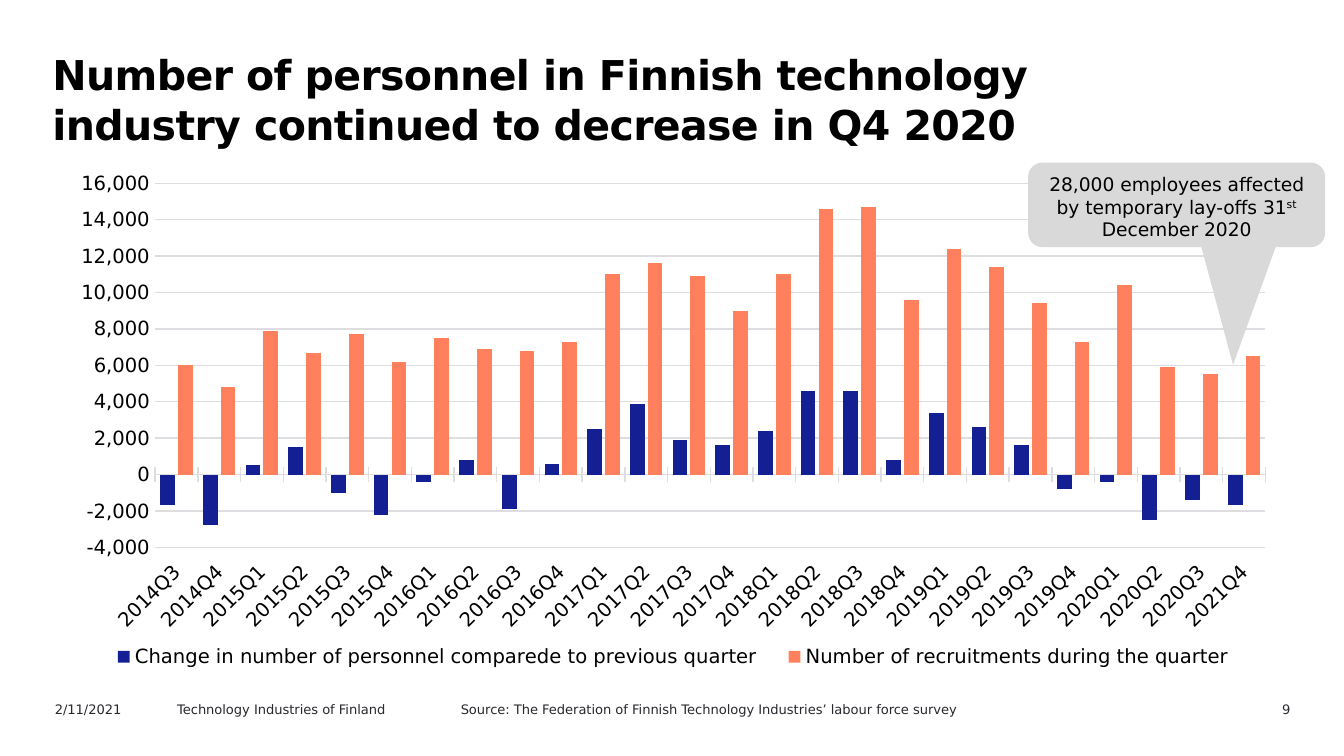
from dataclasses import dataclass

from lxml.etree import SubElement
from pptx import Presentation
from pptx.chart.data import CategoryChartData
from pptx.dml.color import RGBColor
from pptx.enum.chart import (XL_CHART_TYPE, XL_LEGEND_POSITION,
                             XL_TICK_LABEL_POSITION, XL_TICK_MARK)
from pptx.enum.shapes import MSO_SHAPE
from pptx.enum.text import MSO_ANCHOR, PP_ALIGN
from pptx.oxml.ns import qn
from pptx.util import Inches, Pt


@dataclass(frozen=True)
class Theme:
    font: str = "DejaVu Sans"
    black: RGBColor = RGBColor(0x00, 0x00, 0x00)
    dark: RGBColor = RGBColor(0x29, 0x28, 0x2E)
    grid: RGBColor = RGBColor(0xDE, 0xDD, 0xE1)
    callout: RGBColor = RGBColor(0xD9, 0xD9, 0xD9)
    navy: RGBColor = RGBColor(0x14, 0x1F, 0x94)
    coral: RGBColor = RGBColor(0xFF, 0x80, 0x5C)
    title_size: float = 22
    chart_size: float = 10.5
    body_size: float = 10
    footer_size: float = 7


@dataclass(frozen=True)
class Label:
    text: str
    left: float
    width: float
    align: PP_ALIGN = PP_ALIGN.LEFT


@dataclass(frozen=True)
class Series:
    name: str
    values: tuple
    color: RGBColor


T = Theme()

FOOTER = (
    Label("2/11/2021", 0.31, 1),
    Label("Technology Industries of Finland", 1.22, 1.94),
    Label("Source: The Federation of Finnish Technology Industries’ labour force survey", 3.33, 4.11),
    Label("9", 8.76, 0.94, PP_ALIGN.RIGHT),
)

# The last quarter is labelled 2021Q4 on the slide
QUARTERS = [f"{2014 + i // 4}Q{i % 4 + 1}" for i in range(2, 27)] + ["2021Q4"]

SERIES = (
    Series("Change in number of personnel comparede to previous quarter",
           (-1700, -2800, 500, 1500, -1000, -2200, -400, 800, -1900, 600, 2500, 3900, 1900,
            1600, 2400, 4600, 4600, 800, 3400, 2600, 1600, -800, -400, -2500, -1400, -1700),
           T.navy),
    Series("Number of recruitments during the quarter",
           (6000, 4800, 7900, 6700, 7700, 6200, 7500, 6900, 6800, 7300, 11000, 11600, 10900,
            9000, 11000, 14600, 14700, 9600, 12400, 11400, 9400, 7300, 10400, 5900, 5500, 6500),
           T.coral),
)


def set_font(font, size: float, color: RGBColor, bold: bool = False) -> None:
    font.name = T.font
    font.size = Pt(size)
    font.bold = bold
    font.color.rgb = color


def set_line(line, color: RGBColor) -> None:
    line.color.rgb = color
    line.width = Pt(0.75)


def set_layout(element, index: int, x: float, y: float, w: float, h: float,
               inner: bool = False) -> None:
    """Place a chart part by fractions of the chart area."""
    for old in element.findall(qn("c:layout")):
        element.remove(old)
    layout = SubElement(element, qn("c:layout"))
    element.insert(index, layout)
    manual = SubElement(layout, qn("c:manualLayout"))
    values = {"layoutTarget": "inner"} if inner else {}
    values |= {"xMode": "edge", "yMode": "edge", "x": x, "y": y, "w": w, "h": h}
    for tag, value in values.items():
        SubElement(manual, qn(f"c:{tag}")).set("val", str(value))


def add_title(s, text: str) -> None:
    tf = s.shapes.add_textbox(Inches(0.28), Inches(0.31), Inches(8.74), Inches(0.71)).text_frame
    tf.word_wrap = True
    tf.margin_left = Inches(0.11)
    p = tf.paragraphs[0]
    r = p.add_run()
    r.text = text
    p.line_spacing = Pt(27)
    set_font(p.font, T.title_size, T.black, bold=True)
    r.font._element.set("spc", "-30")


def add_footer(s, label: Label) -> None:
    tf = s.shapes.add_textbox(Inches(label.left), Inches(5.17),
                              Inches(label.width), Inches(0.18)).text_frame
    tf.word_wrap = True
    p = tf.paragraphs[0]
    p.text = label.text
    p.alignment = label.align
    set_font(p.font, T.footer_size, T.dark)


def add_personnel_chart(s) -> None:
    data = CategoryChartData(number_format="#,##0")
    data.categories = QUARTERS
    for item in SERIES:
        data.add_series(item.name, item.values)
    chart = s.shapes.add_chart(XL_CHART_TYPE.COLUMN_CLUSTERED, Inches(0.42), Inches(1.21),
                               Inches(9.18), Inches(3.87), data).chart
    chart.has_title = False
    set_font(chart.font, T.body_size, T.dark)

    # Columns
    plot = chart.plots[0]
    plot.gap_width = 70
    plot.overlap = -21
    plot.vary_by_categories = False
    for series, item in zip(plot.series, SERIES):
        series.invert_if_negative = False
        series.format.fill.solid()
        series.format.fill.fore_color.rgb = item.color
    plot_area = chart._chartSpace.find(qn("c:chart")).find(qn("c:plotArea"))
    set_layout(plot_area, 0, 0.08, 0.04, 0.9, 0.7, inner=True)

    # Quarter axis with slanted labels
    cat = chart.category_axis
    cat.tick_label_position = XL_TICK_LABEL_POSITION.LOW
    cat.major_tick_mark = XL_TICK_MARK.CROSS
    set_font(cat.tick_labels.font, T.chart_size, T.black)
    set_line(cat.format.line, T.grid)
    cat._element.find(qn("c:txPr")).find(qn("a:bodyPr")).set("rot", "-2700000")

    # Value axis
    val = chart.value_axis
    val.minimum_scale, val.maximum_scale, val.major_unit = -4000, 16000, 2000
    val.major_tick_mark = XL_TICK_MARK.NONE
    val.tick_labels.number_format = "#,##0"
    val.tick_labels.number_format_is_linked = False
    set_font(val.tick_labels.font, T.chart_size, T.black)
    val.format.line.fill.background()
    set_line(val.major_gridlines.format.line, T.grid)

    # Legend on one row
    chart.has_legend = True
    chart.legend.position = XL_LEGEND_POSITION.BOTTOM
    chart.legend.include_in_layout = False
    set_font(chart.legend.font, T.chart_size, T.black)
    set_layout(chart.legend._element, 1, 0.03, 0.91, 0.94, 0.08)


def add_callout(s, before: str, raised: str, after: str) -> None:
    sp = s.shapes.add_shape(MSO_SHAPE.ROUNDED_RECTANGULAR_CALLOUT, Inches(7.65), Inches(1.21),
                            Inches(2.21), Inches(0.63))
    for i, value in enumerate((0.19, 1.89, 0.17)):
        sp.adjustments[i] = value
    sp.shadow.inherit = False
    sp.fill.solid()
    sp.fill.fore_color.rgb = T.callout
    sp.line.fill.background()
    tf = sp.text_frame
    tf.word_wrap = True
    tf.vertical_anchor = MSO_ANCHOR.MIDDLE
    tf.margin_top = Inches(0.08)
    p = tf.paragraphs[0]
    p.alignment = PP_ALIGN.CENTER
    for text in (before, raised, after):
        r = p.add_run()
        r.text = text
        if text == raised:
            r.font._element.set("baseline", "30000")
    set_font(p.font, T.body_size, T.black)


def main() -> None:
    prs = Presentation()
    prs.slide_width = Inches(10)
    prs.slide_height = Inches(10 * 9 / 16)
    s = prs.slides.add_slide(prs.slide_layouts[6])

    add_title(s, "Number of personnel in Finnish technology industry continued to decrease in Q4 2020")
    for label in FOOTER:
        add_footer(s, label)
    add_personnel_chart(s)
    add_callout(s, "28,000 employees affected by temporary lay-offs 31", "st", " December 2020")

    prs.save("out.pptx")


if __name__ == "__main__":
    main()
